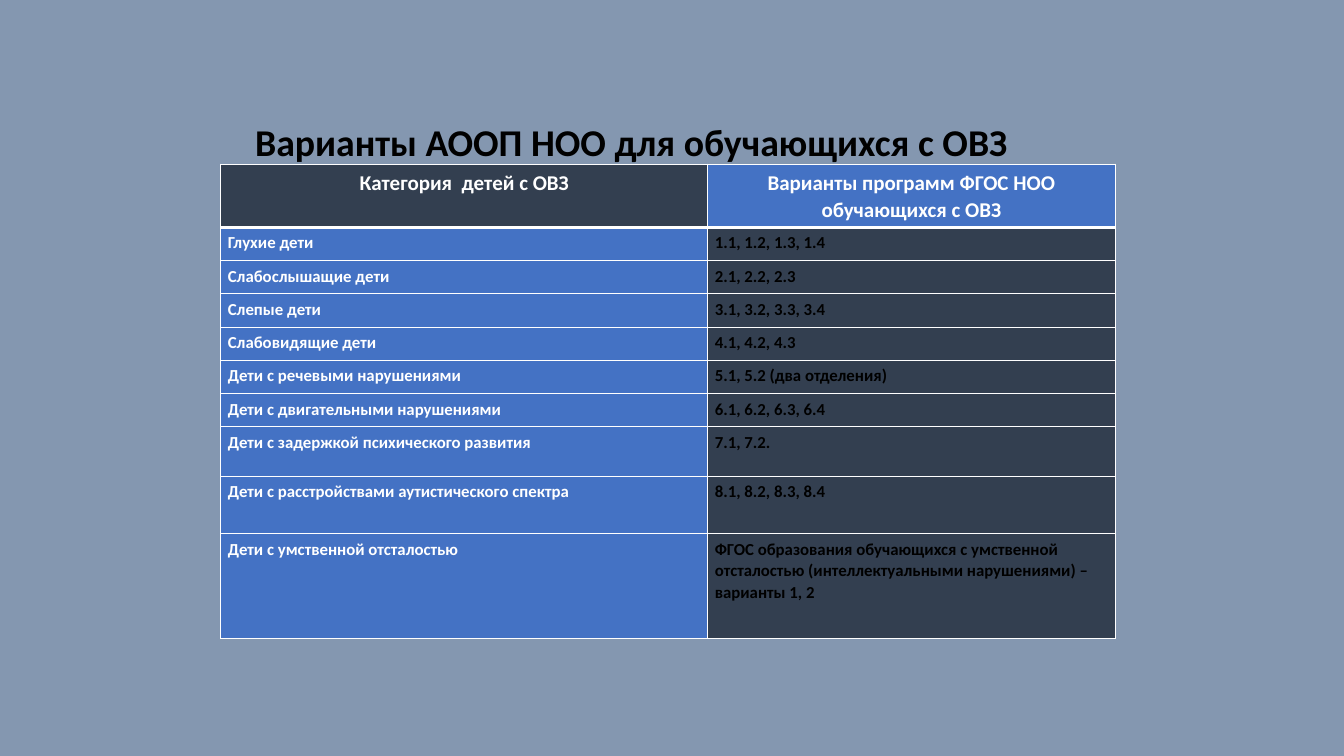
from lxml.etree import SubElement
from pptx import Presentation
from pptx.dml.color import RGBColor
from pptx.enum.text import MSO_ANCHOR, PP_ALIGN
from pptx.oxml.ns import qn
from pptx.util import Inches, Pt

FONT = "Calibri"
BACKGROUND, BLUE, NAVY = "8497B0", "4472C4", "333F50"
WHITE, BLACK = "FFFFFF", "000000"

TITLE = "Варианты АООП НОО для обучающихся с ОВЗ"
HEADER = ("Категория  детей с ОВЗ", "Варианты программ ФГОС НОО\nобучающихся с ОВЗ")
PROGRAMS = [
    ("Глухие дети", "1.1, 1.2, 1.3, 1.4"),
    ("Слабослышащие дети", "2.1, 2.2, 2.3"),
    ("Слепые дети", "3.1, 3.2, 3.3, 3.4"),
    ("Слабовидящие дети", "4.1, 4.2, 4.3"),
    ("Дети с речевыми нарушениями", "5.1, 5.2 (два отделения)"),
    ("Дети с двигательными нарушениями", "6.1, 6.2, 6.3, 6.4"),
    ("Дети с задержкой психического развития", "7.1, 7.2."),
    ("Дети с расстройствами аутистического спектра", "8.1, 8.2, 8.3, 8.4"),
    ("Дети с умственной отсталостью",
     "ФГОС образования обучающихся с умственной отсталостью "
     "(интеллектуальными нарушениями) – варианты 1, 2"),
]
COLUMN_WIDTHS = [4.83, 4.04]
ROW_HEIGHTS = [0.61] + [0.33] * 6 + [0.49, 0.57, 1.04]


def paint(fill, color):
    fill.solid()
    fill.fore_color.rgb = RGBColor.from_string(color)


def format_text(frame, size, color, align, spacing):
    for para in frame.paragraphs:
        para.alignment = align
        para.line_spacing = spacing
        para.font.name = FONT
        para.font.size = Pt(size)
        para.font.bold = True
        para.font.color.rgb = RGBColor.from_string(color)


def add_border(cell, side, width):
    properties = cell._tc.get_or_add_tcPr()
    line = SubElement(properties, qn(f"a:ln{side}"), w=str(Pt(width)))
    SubElement(SubElement(line, qn("a:solidFill")), qn("a:srgbClr"), val=WHITE)


def fill_cell(cell, text, size, fill, color, align, top=1, bottom=1):
    cell.text = text
    cell.margin_left = cell.margin_right = Inches(0.07)
    cell.margin_top = cell.margin_bottom = Inches(0.04)
    format_text(cell.text_frame, size, color, align, 1.07)
    for side, width in zip("LRTB", (1, 1, top, bottom)):
        add_border(cell, side, width)
    paint(cell.fill, fill)


def add_title(page):
    title = page.shapes.title
    title.left, title.top = Inches(2.43), Inches(1.07)
    title.width, title.height = Inches(8.63), Inches(0.72)
    title.text_frame.text = TITLE
    title.text_frame.word_wrap = True
    title.text_frame.vertical_anchor = MSO_ANCHOR.MIDDLE
    format_text(title.text_frame, 27, BLACK, PP_ALIGN.LEFT, 0.9)


def add_program_table(page):
    table = page.shapes.add_table(
        len(ROW_HEIGHTS), len(COLUMN_WIDTHS), Inches(2.19), Inches(1.63),
        Inches(sum(COLUMN_WIDTHS)), Inches(sum(ROW_HEIGHTS))).table
    for column, width in zip(table.columns, COLUMN_WIDTHS):
        column.width = Inches(width)
    for row, height in zip(table.rows, ROW_HEIGHTS):
        row.height = Inches(height)

    for column, (text, fill) in enumerate(zip(HEADER, (NAVY, BLUE))):
        fill_cell(table.cell(0, column), text, 15, fill, WHITE, PP_ALIGN.CENTER, bottom=3)
    for row, (category, variants) in enumerate(PROGRAMS, start=1):
        top = 3 if row == 1 else 1
        fill_cell(table.cell(row, 0), category, 12, BLUE, WHITE, PP_ALIGN.LEFT, top)
        fill_cell(table.cell(row, 1), variants, 12, NAVY, BLACK, PP_ALIGN.LEFT, top)


def main():
    deck = Presentation()
    deck.slide_width, deck.slide_height = Inches(13.33), Inches(7.5)
    page = deck.slides.add_slide(deck.slide_layouts[5])
    paint(page.background.fill, BACKGROUND)
    add_title(page)
    add_program_table(page)
    deck.save("out.pptx")


if __name__ == "__main__":
    main()
